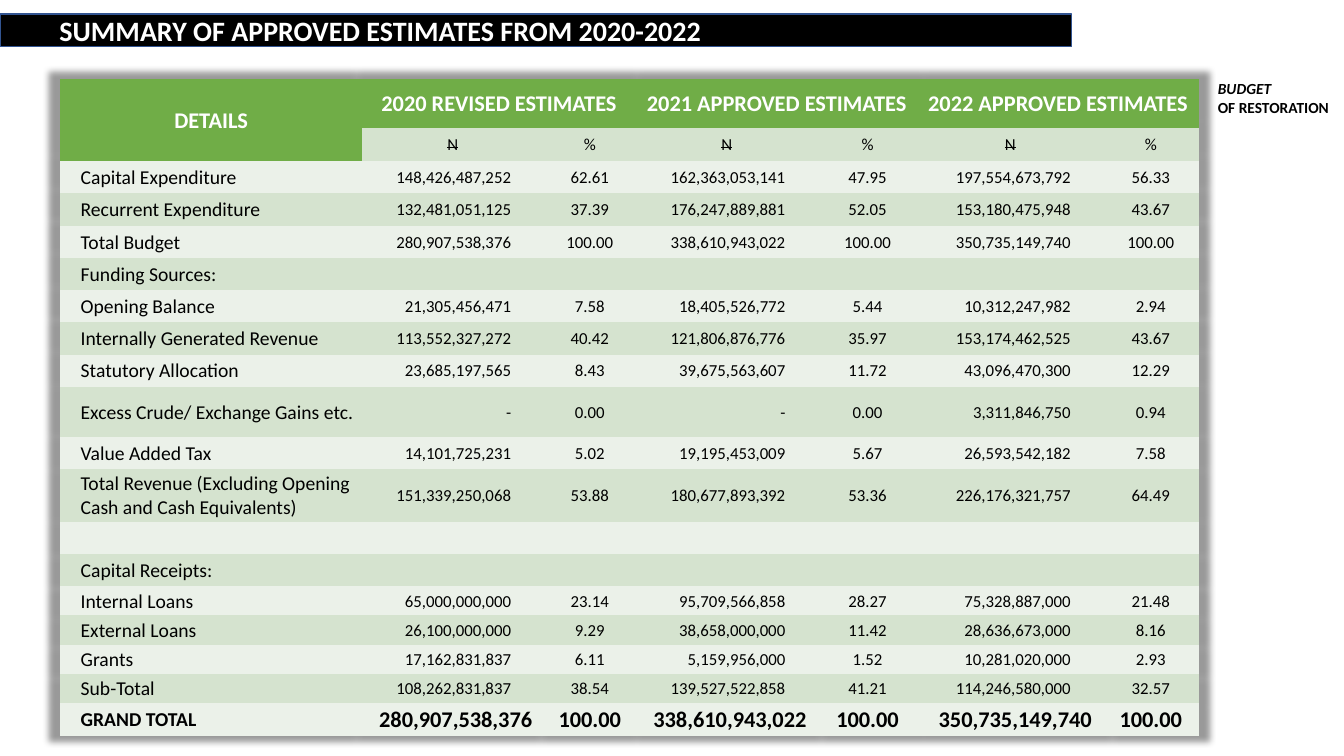
from lxml import etree
from pptx import Presentation
from pptx import util as u
from pptx.dml.color import RGBColor
from pptx.enum import shapes, text
from pptx.oxml.ns import qn

PX = 9144  # 100 px to the inch
COLORS = {"black": "000000", "white": "FFFFFF", "edge": "325491",
          "header": "70AD47", "dark": "D5E3CF", "light": "EBF1E9"}
LEFT, CENTER, RIGHT = text.PP_ALIGN.LEFT, text.PP_ALIGN.CENTER, text.PP_ALIGN.RIGHT
NO_STYLE = "{2D5ABB26-0587-4C30-8999-92F81FD0307C}"

COLUMNS = [299, 180, 92, 180, 99, 184, 95]
ROWS = [49, 33] + [32] * 7 + [50, 32, 52, 32, 32] + [29] * 4 + [33]
YEARS = ["2020 REVISED ESTIMATES", "2021 APPROVED ESTIMATES", "2022 APPROVED ESTIMATES"]
ESTIMATES = [
    ("Capital Expenditure", "148,426,487,252 62.61 162,363,053,141 47.95 197,554,673,792 56.33"),
    ("Recurrent Expenditure", "132,481,051,125 37.39 176,247,889,881 52.05 153,180,475,948 43.67"),
    ("Total Budget", "280,907,538,376 100.00 338,610,943,022 100.00 350,735,149,740 100.00"),
    ("Funding Sources:", ""),
    ("Opening Balance", "21,305,456,471 7.58 18,405,526,772 5.44 10,312,247,982 2.94"),
    ("Internally Generated Revenue",
     "113,552,327,272 40.42 121,806,876,776 35.97 153,174,462,525 43.67"),
    ("Statutory Allocation", "23,685,197,565 8.43 39,675,563,607 11.72 43,096,470,300 12.29"),
    ("Excess Crude/ Exchange Gains etc.", "- 0.00 - 0.00 3,311,846,750 0.94"),
    ("Value Added Tax", "14,101,725,231 5.02 19,195,453,009 5.67 26,593,542,182 7.58"),
    ("Total Revenue (Excluding Opening Cash and Cash Equivalents)",
     "151,339,250,068 53.88 180,677,893,392 53.36 226,176,321,757 64.49"),
    ("", ""),
    ("Capital Receipts:", ""),
    ("Internal Loans", "65,000,000,000 23.14 95,709,566,858 28.27 75,328,887,000 21.48"),
    ("External Loans", "26,100,000,000 9.29 38,658,000,000 11.42 28,636,673,000 8.16"),
    ("Grants", "17,162,831,837 6.11 5,159,956,000 1.52 10,281,020,000 2.93"),
    ("Sub-Total", "108,262,831,837 38.54 139,527,522,858 41.21 114,246,580,000 32.57"),
    ("GRAND TOTAL", "280,907,538,376 100.00 338,610,943,022 100.00 350,735,149,740 100.00"),
]


def color(name):
    return RGBColor.from_string(COLORS[name])


class Deck:
    font = "Calibri"

    def __init__(self, width, height):
        self.prs = Presentation()
        self.prs.slide_width, self.prs.slide_height = width * PX, height * PX
        self.s = self.prs.slides.add_slide(self.prs.slide_layouts[6])

    def style(self, p, size, ink="black", bold=False, italic=False, align=LEFT):
        p.alignment = align
        p.font.name, p.font.size = self.font, u.Pt(size)
        p.font.bold, p.font.italic = bold, italic
        p.font.color.rgb = color(ink)

    def banner(self, box, title, indent):
        sp = self.s.shapes.add_shape(shapes.MSO_SHAPE.ROUNDED_RECTANGLE, *[n * PX for n in box])
        sp.adjustments[0] = 0
        sp.shadow.inherit = False
        sp.fill.solid()
        sp.fill.fore_color.rgb = color("black")
        sp.line.color.rgb = color("edge")
        sp.line.width = u.Pt(1)
        tf = sp.text_frame
        tf.margin_left = indent * PX
        tf.vertical_anchor = text.MSO_ANCHOR.MIDDLE
        tf.text = title
        self.style(tf.paragraphs[0], 20, "white", bold=True)

    def label(self, box, lines):
        """Add bold lines of text, the first of them in italics."""
        tf = self.s.shapes.add_textbox(*[n * PX for n in box]).text_frame
        tf.word_wrap = True
        tf.text = "\n".join(lines)
        for i, p in enumerate(tf.paragraphs):
            self.style(p, 11, bold=True, italic=i == 0)

    def table(self, left, top, columns, rows):
        """Add a table without style or borders, with a soft shadow all round."""
        frame = self.s.shapes.add_table(len(rows), len(columns), left * PX, top * PX,
                                        sum(columns) * PX, sum(rows) * PX)
        table = frame.table
        table.first_row = table.horz_banding = False
        for column, width in zip(table.columns, columns):
            column.width = width * PX
        for row, height in zip(table.rows, rows):
            row.height = height * PX
        tbl_pr = table._tbl.tblPr
        tbl_pr.find(qn("a:tableStyleId")).text = NO_STYLE
        effects = etree.Element(qn("a:effectLst"))
        shadow = etree.SubElement(effects, qn("a:outerShdw"), blurRad="63500", sx="102000",
                                  sy="102000", algn="ctr", rotWithShape="0")
        ink = etree.SubElement(shadow, qn("a:prstClr"), val="black")
        etree.SubElement(ink, qn("a:alpha"), val="40000")
        tbl_pr.insert(0, effects)
        return table

    def cell(self, cell, words, fill, size, left=1, right=1, strike=False, **style):
        cell.fill.solid()
        cell.fill.fore_color.rgb = color(fill)
        cell.margin_left, cell.margin_right = left * PX, right * PX
        cell.margin_top, cell.margin_bottom = PX, 0
        cell.vertical_anchor = text.MSO_ANCHOR.MIDDLE
        cell.text = words
        p = cell.text_frame.paragraphs[0]
        self.style(p, size, **style)
        if strike:
            p.runs[0]._r.get_or_add_rPr().set("strike", "sngStrike")


def fill_header(deck, table):
    heading = dict(fill="header", size=16, ink="white", bold=True, align=CENTER)
    table.cell(0, 0).merge(table.cell(1, 0))
    deck.cell(table.cell(0, 0), "DETAILS", **heading)
    for i, year in enumerate(YEARS):
        col = 1 + 2 * i
        table.cell(0, col).merge(table.cell(0, col + 1))
        deck.cell(table.cell(0, col), year, **heading)
        deck.cell(table.cell(1, col), "N", "dark", 12, strike=True, align=CENTER)
        deck.cell(table.cell(1, col + 1), "%", "dark", 12, align=CENTER)


def fill_estimates(deck, table):
    for row, (item, figures) in enumerate(ESTIMATES, start=2):
        values = figures.split() or [""] * (len(COLUMNS) - 1)
        fill = "dark" if row % 2 else "light"
        total = item == "GRAND TOTAL"
        size, inset = (16, 11) if total else (12, 32)
        deck.cell(table.cell(row, 0), item, fill, 14, left=20, bold=total)
        for col, value in enumerate(values, start=1):
            layout = dict(right=inset, align=RIGHT) if col % 2 else dict(align=CENTER)
            deck.cell(table.cell(row, col), value, fill, size, bold=total, **layout)


def main():
    deck = Deck(1333, 750)
    deck.banner((0, 14, 1063, 32), "SUMMARY OF APPROVED ESTIMATES FROM 2020-2022", 59)
    deck.label((1198, 74, 152, 47), ["BUDGET", "OF RESTORATION"])
    table = deck.table(60, 78, COLUMNS, ROWS)
    fill_header(deck, table)
    fill_estimates(deck, table)
    deck.prs.save("out.pptx")


if __name__ == "__main__":
    main()
